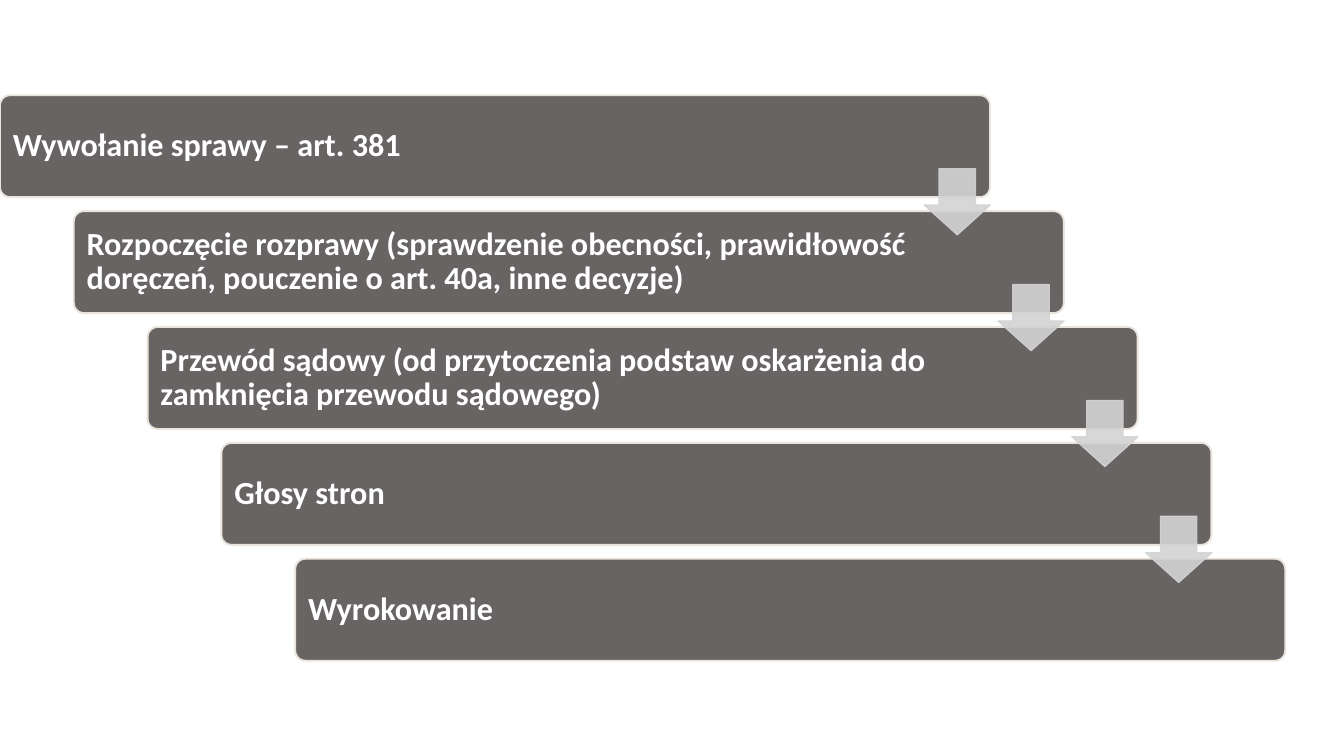
from dataclasses import dataclass

from lxml.etree import SubElement
from pptx import Presentation
from pptx.dml.color import RGBColor
from pptx.enum.shapes import MSO_SHAPE
from pptx.enum.text import MSO_ANCHOR, PP_ALIGN
from pptx.oxml.ns import qn
from pptx.util import Cm, Pt

STAGES = [
    "Wywołanie sprawy – art. 381",
    "Rozpoczęcie rozprawy (sprawdzenie obecności, prawidłowość doręczeń, "
    "pouczenie o art. 40a, inne decyzje)",
    "Przewód sądowy (od przytoczenia podstaw oskarżenia do zamknięcia "
    "przewodu sądowego)",
    "Głosy stron",
    "Wyrokowanie",
]


@dataclass(frozen=True)
class Theme:
    font: str = "Calibri"
    size: float = 23
    text: str = "FFFFFF"
    bar: str = "696464"
    bar_line: str = "E9E5DC"
    bar_line_width: float = 1.35
    arrow: str = "D4D3D3"
    arrow_line_width: float = 0.85
    arrow_alpha: int = 90


THEME = Theme()

STEP_X, STEP_Y = 1.86, 2.92
BAR_TOP, BAR_W, BAR_H = 2.4, 24.95, 2.57
ARROW_LEFT, ARROW_TOP, ARROW_SIZE = 23.29, 4.25, 1.67
PAD_LEFT, PAD_RIGHT, PAD_Y = 0.25, 3.7, 0.25


def add_block(slide, kind, box, adjustments, fill, line, line_width):
    sp = slide.shapes.add_shape(kind, *(Cm(v) for v in box))
    for i, value in enumerate(adjustments):
        sp.adjustments[i] = value
    sp.shadow.inherit = False
    sp.fill.solid()
    sp.fill.fore_color.rgb = RGBColor.from_string(fill)
    sp.line.color.rgb = RGBColor.from_string(line)
    sp.line.width = Pt(line_width)
    return sp


def add_stage(slide, i, text):
    box = (i * STEP_X, BAR_TOP + i * STEP_Y, BAR_W, BAR_H)
    sp = add_block(slide, MSO_SHAPE.ROUNDED_RECTANGLE, box, [0.1],
                   THEME.bar, THEME.bar_line, THEME.bar_line_width)
    tf = sp.text_frame
    tf.text = text
    tf.word_wrap = True
    tf.vertical_anchor = MSO_ANCHOR.MIDDLE
    tf.margin_left, tf.margin_right = Cm(PAD_LEFT), Cm(PAD_RIGHT)
    tf.margin_top = tf.margin_bottom = Cm(PAD_Y)
    p = tf.paragraphs[0]
    p.alignment = PP_ALIGN.LEFT
    p.line_spacing = 0.9
    r = p.runs[0]
    r.font.name = THEME.font
    r.font.size = Pt(THEME.size)
    r.font.bold = True
    r.font.color.rgb = RGBColor.from_string(THEME.text)


def add_arrow(slide, i):
    box = (ARROW_LEFT + i * STEP_X, ARROW_TOP + i * STEP_Y, ARROW_SIZE, ARROW_SIZE)
    sp = add_block(slide, MSO_SHAPE.DOWN_ARROW, box, [0.55, 0.45],
                   THEME.arrow, THEME.arrow, THEME.arrow_line_width)
    for color in sp.element.spPr.iter(qn("a:srgbClr")):
        SubElement(color, qn("a:alpha")).set("val", str(THEME.arrow_alpha * 1000))


def main():
    prs = Presentation()
    prs.slide_width, prs.slide_height = Cm(33.87), Cm(19.05)
    slide = prs.slides.add_slide(prs.slide_layouts[6])
    for i, text in enumerate(STAGES):
        add_stage(slide, i, text)
    for i in range(len(STAGES) - 1):
        add_arrow(slide, i)
    prs.save("out.pptx")


if __name__ == "__main__":
    main()
